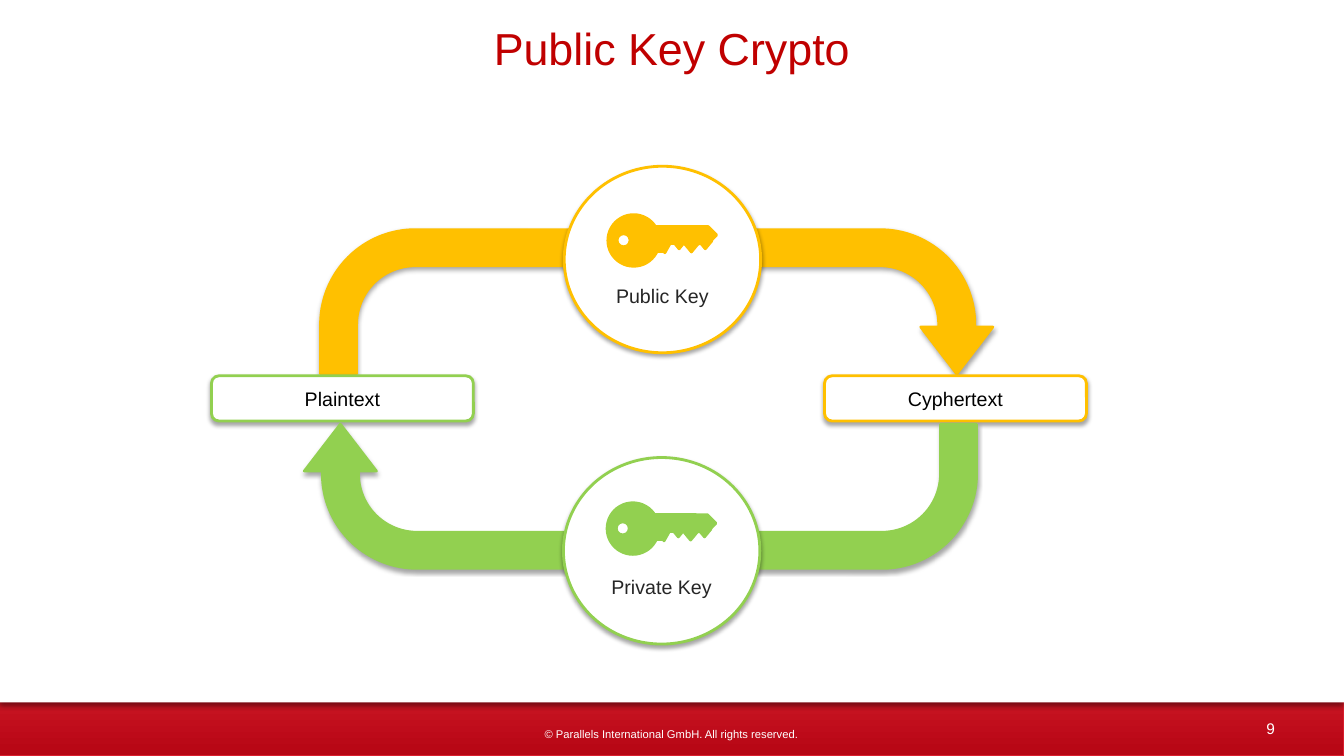
from dataclasses import dataclass

import lxml.etree
import pptx
import pptx.dml.color
import pptx.enum.shapes
import pptx.enum.text
import pptx.oxml.ns
import pptx.util
from pptx.util import Cm

SHAPE = pptx.enum.shapes.MSO_SHAPE
CENTER = pptx.enum.text.PP_ALIGN.CENTER
MIDDLE = pptx.enum.text.MSO_ANCHOR.MIDDLE
FONT = "Arial"
WHITE, BLACK, AMBER, GREEN = "FFFFFF", "000000", "FFC000", "92D050"


@dataclass
class Place:
    left: float
    top: float
    width: float
    height: float


@dataclass
class Shadow:
    opacity: int
    blur: float
    distance: float


@dataclass
class KeyPart:
    kind: SHAPE
    place: Place
    hollow: bool = False


@dataclass
class Half:
    color: str
    label: str
    arrow: Place
    rotation: int
    circle: Place
    key_left: float
    key_top: float


@dataclass
class Message:
    text: str
    color: str
    left: float


SOFT = Shadow(35, 3, 1.8)
PANEL_SHADOW = Shadow(40, 4, 3)

# Parts of a key, measured from its top left corner
KEY = [
    KeyPart(SHAPE.OVAL, Place(0, 0, 1.3, 1.3)),
    KeyPart(SHAPE.RECTANGLE, Place(0.84, 0.3, 1.4, 0.43)),
    KeyPart(SHAPE.PENTAGON, Place(2.21, 0.3, 0.53, 0.43)),
    KeyPart(SHAPE.FLOWCHART_MERGE, Place(2.29, 0.66, 0.33, 0.2)),
    KeyPart(SHAPE.FLOWCHART_MERGE, Place(1.94, 0.74, 0.33, 0.2)),
    KeyPart(SHAPE.FLOWCHART_MERGE, Place(1.63, 0.66, 0.33, 0.2)),
    KeyPart(SHAPE.FLOWCHART_MERGE, Place(1.22, 0.58, 0.43, 0.38)),
    KeyPart(SHAPE.RECTANGLE, Place(0.84, 0.66, 0.61, 0.28)),
    KeyPart(SHAPE.OVAL, Place(0.23, 0.48, 0.33, 0.33), hollow=True),
]
# Shaft width, head half width, head length, bend radius, total length
ARROW_SHAPE = (0.25, 0.25, 0.325, 0.657, 1.0)

ENCRYPTION = Half(AMBER, "Public Key", Place(8.08, 5.79, 16.94, 3.63), 0,
                  Place(14.22, 4.19, 4.95, 4.7), 15.32, 5.41)
DECRYPTION = Half(GREEN, "Private Key", Place(7.67, 10.69, 16.94, 3.63), 180,
                  Place(14.2, 11.53, 4.95, 4.7), 15.3, 12.67)
MESSAGES = [Message("Plaintext", GREEN, 5.33),
            Message("Cyphertext", AMBER, 20.78)]


def rgb(color: str) -> pptx.dml.color.RGBColor:
    return pptx.dml.color.RGBColor.from_string(color)


def lengths(place: Place) -> tuple:
    return Cm(place.left), Cm(place.top), Cm(place.width), Cm(place.height)


def cast_shadow(shape, shadow: Shadow) -> None:
    effects = shape.element.spPr.find(pptx.oxml.ns.qn("a:effectLst"))
    outer = lxml.etree.SubElement(
        effects, pptx.oxml.ns.qn("a:outerShdw"),
        blurRad=str(pptx.util.Pt(shadow.blur)),
        dist=str(pptx.util.Pt(shadow.distance)),
        dir="5400000", rotWithShape="0")
    tint = lxml.etree.SubElement(outer, pptx.oxml.ns.qn("a:srgbClr"), val=BLACK)
    lxml.etree.SubElement(tint, pptx.oxml.ns.qn("a:alpha"),
                          val=str(shadow.opacity * 1000))


def add_shape(page, kind: SHAPE, place: Place, fill: str, line: str | None,
              shadow: Shadow | None = None):
    shape = page.shapes.add_shape(kind, *lengths(place))
    shape.shadow.inherit = False
    shape.fill.solid()
    shape.fill.fore_color.rgb = rgb(fill)
    if line:
        shape.line.color.rgb = rgb(line)
        shape.line.width = pptx.util.Pt(2)
    else:
        shape.line.fill.background()
    if shadow:
        cast_shadow(shape, shadow)
    return shape


def write(shape, text: str, size: float, color: str, inset: float = 0.13,
          top_inset: float = 0.13) -> None:
    frame = shape.text_frame
    frame.word_wrap = True
    frame.vertical_anchor = MIDDLE
    frame.margin_left = frame.margin_right = Cm(inset)
    frame.margin_top = Cm(top_inset)
    frame.margin_bottom = Cm(min(inset, 0.13))
    para = frame.paragraphs[0]
    para.text = text
    para.alignment = CENTER
    para.font.name = FONT
    para.font.size = pptx.util.Pt(size)
    para.font.color.rgb = rgb(color)


def add_frame(page) -> None:
    # Red footer band under a white panel
    band = add_shape(page, SHAPE.RECTANGLE, Place(0, 15.88, 33.87, 3.17),
                     "B60513", "D91D2C", Shadow(35, 3.1, 1.8))
    band.line.width = pptx.util.Pt(0.75)
    band.fill.gradient()
    band.fill.gradient_angle = 90
    for stop, (position, color) in zip(band.fill.gradient_stops,
                                       [(0, "B60513"), (0.8, "D92231")]):
        stop.position = position
        stop.color.rgb = rgb(color)
    add_shape(page, SHAPE.RECTANGLE, Place(0, 0, 33.87, 17.7), WHITE, None,
              PANEL_SHADOW)

    # Footer texts
    number = page.shapes.add_textbox(*lengths(Place(31.32, 17.96, 1.4, 0.79)))
    write(number, "9", 11, WHITE)
    notice = page.shapes.add_textbox(*lengths(Place(13, 18.34, 7.85, 0.33)))
    write(notice, "© Parallels International GmbH. All rights reserved.", 8,
          WHITE, inset=0, top_inset=0)


def add_title(page, text: str) -> None:
    title = page.shapes.title
    title.left, title.top, title.width, title.height = lengths(
        Place(5.05, 0.51, 23.77, 1.37))
    write(title, text, 32, "C00000", inset=0, top_inset=0)
    page.shapes.element.append(title.element)  # in front of the white panel


def add_half(page, half: Half) -> None:
    arrow = add_shape(page, SHAPE.U_TURN_ARROW, half.arrow, half.color,
                      half.color, SOFT)
    arrow.rotation = half.rotation
    for index, value in enumerate(ARROW_SHAPE):
        arrow.adjustments[index] = value

    circle = add_shape(page, SHAPE.OVAL, half.circle, WHITE, half.color, SOFT)
    write(circle, half.label, 14, "262626", top_inset=1.95)

    for part in KEY:
        place = Place(half.key_left + part.place.left,
                      half.key_top + part.place.top,
                      part.place.width, part.place.height)
        add_shape(page, part.kind, place, WHITE if part.hollow else half.color,
                  half.color)


def add_message(page, message: Message) -> None:
    box = add_shape(page, SHAPE.ROUNDED_RECTANGLE,
                    Place(message.left, 9.47, 6.6, 1.14), WHITE, message.color,
                    SOFT)
    write(box, message.text, 14, BLACK)


def main() -> None:
    deck = pptx.Presentation()
    deck.slide_width, deck.slide_height = Cm(33.87), Cm(19.05)
    page = deck.slides.add_slide(deck.slide_layouts[5])
    add_frame(page)
    add_title(page, "Public Key Crypto")
    add_half(page, ENCRYPTION)
    for message in MESSAGES:
        add_message(page, message)
    add_half(page, DECRYPTION)
    deck.save("out.pptx")


if __name__ == "__main__":
    main()
